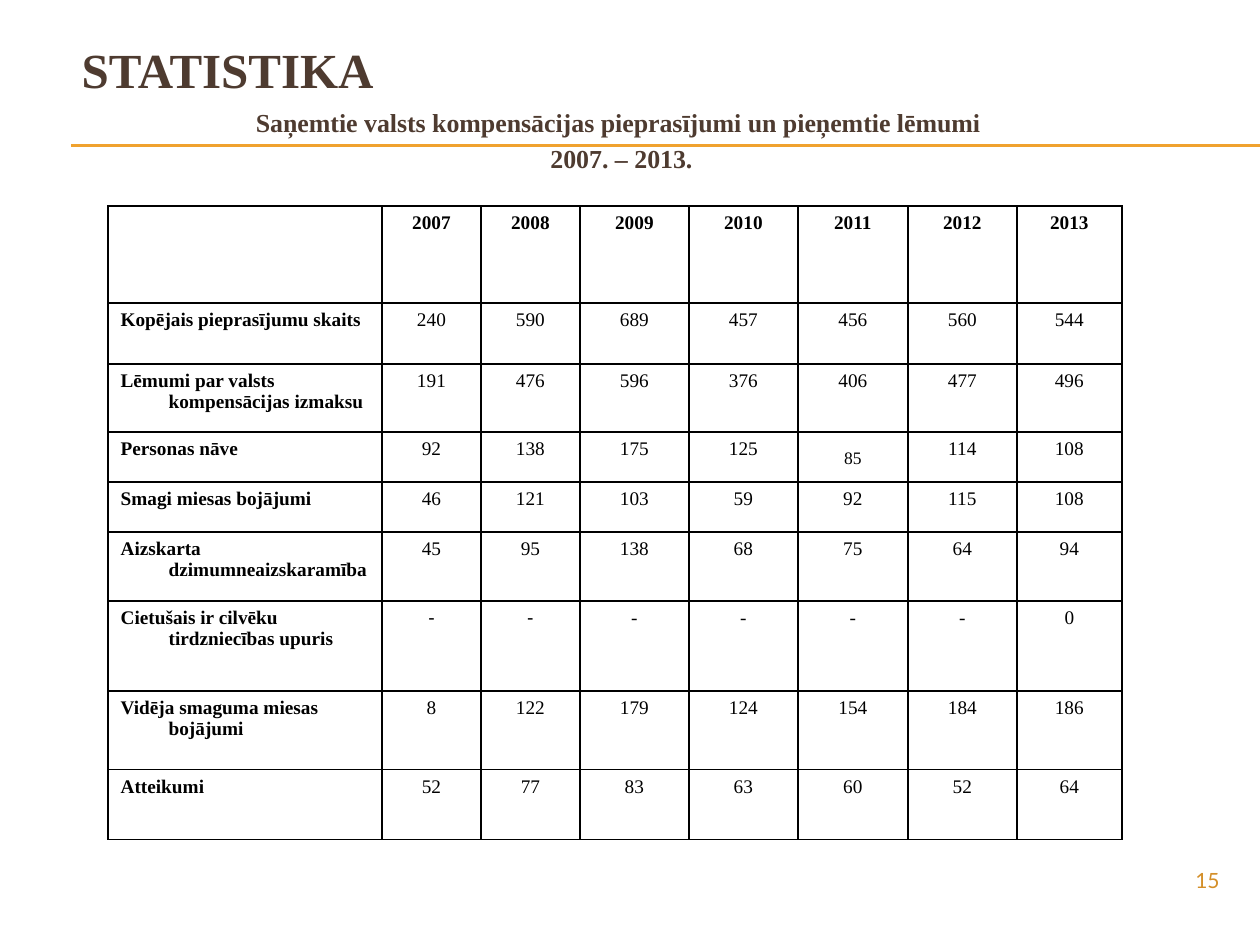
from lxml import etree
from pptx import Presentation
from pptx import util as u
from pptx.dml.color import RGBColor
from pptx.enum import shapes, text
from pptx.oxml import ns

SCALE = 914400 / 126  # EMU per px
SERIF = "Times New Roman"
BROWN, AMBER, BLACK = "4E3B30", "F0A22E", "000000"


def px(length):
    return u.Emu(round(length * SCALE))


def write(para, words, hanging=None, **font):
    """Add one formatted run; hanging is (left margin, indent) in px."""
    if hanging:
        props = para._p.get_or_add_pPr()
        props.set("marL", str(px(hanging[0])))
        props.set("indent", str(px(hanging[1])))
    span = para.add_run()
    span.text = words
    span.font.color.rgb = RGBColor.from_string(font.pop("color"))
    for name, value in font.items():
        setattr(span.font, name, value)


deck = Presentation()
deck.slide_width, deck.slide_height = px(1260), px(945)
page = deck.slides.add_slide(deck.slide_layouts[1])

# Double rule under the heading
for y in (145, 146):
    rule = page.shapes.add_connector(shapes.MSO_CONNECTOR.STRAIGHT, px(71), px(y), px(1260), px(y))
    rule.line.color.rgb = RGBColor.from_string(AMBER)
    rule.line.width = u.Pt(0.75)
    etree.SubElement(rule._element.spPr, ns.qn("a:effectLst"))

# Title and subtitle placeholders
title, body = page.placeholders
places = [(title, (69, 20, 1074, 98), text.MSO_ANCHOR.MIDDLE),
          (body, (147, 100, 934, 78), text.MSO_ANCHOR.TOP)]
for box, place, anchor in places:
    box.left, box.top, box.width, box.height = map(px, place)
    box.text_frame.auto_size = text.MSO_AUTO_SIZE.NONE
    box.text_frame.vertical_anchor = anchor

heading = title.text_frame.paragraphs[0]
heading.alignment = text.PP_ALIGN.LEFT
write(heading, "STATISTIKA", size=u.Pt(28), name=SERIF, bold=True, color=BROWN)

subtitle = ["Saņemtie valsts kompensācijas pieprasījumi un pieņemtie lēmumi ", "2007. – 2013."]
for i, words in enumerate(subtitle):
    para = body.text_frame.add_paragraph() if i else body.text_frame.paragraphs[0]
    etree.SubElement(para._p.get_or_add_pPr(), ns.qn("a:buNone"))
    para.alignment = text.PP_ALIGN.CENTER
    para.space_before = u.Pt(3 if i else 0)
    write(para, words, (50, -35), size=u.Pt(14.8), name=SERIF, bold=True, color=BROWN)

# Statistics table
rows = [
    ["", "2007", "2008", "2009", "2010", "2011", "2012", "2013"],
    ["Kopējais pieprasījumu skaits ", 240, 590, 689, 457, 456, 560, 544],
    ["Lēmumi par valsts kompensācijas izmaksu", 191, 476, 596, 376, 406, 477, 496],
    ["Personas nāve ", 92, 138, 175, 125, 85, 114, 108],
    ["Smagi miesas bojājumi ", 46, 121, 103, 59, 92, 115, 108],
    ["Aizskarta dzimumneaizskaramība ", 45, 95, 138, 68, 75, 64, 94],
    ["Cietušais ir cilvēku tirdzniecības upuris", "-", "-", "-", "-", "-", "-", 0],
    ["Vidēja smaguma miesas bojājumi", 8, 122, 179, 124, 154, 184, 186],
    ["Atteikumi ", 52, 77, 83, 63, 60, 52, 64],
]
widths = [274, 99, 99, 109, 109, 110, 109, 105]
heights = [97, 61, 68, 50, 50, 69, 90, 79, 70]
table = page.shapes.add_table(len(rows), len(widths), px(108), px(206),
                              px(sum(widths)), px(sum(heights))).table
table.first_row = table.horz_banding = False
for column, width in zip(table.columns, widths):
    column.width = px(width)
for row, height in zip(table.rows, heights):
    row.height = px(height)

for r, values in enumerate(rows):
    for c, value in enumerate(values):
        cell = table.cell(r, c)
        props = cell._tc.get_or_add_tcPr()
        for side in ("lnL", "lnR", "lnT", "lnB"):
            border = etree.SubElement(props, ns.qn(f"a:{side}"), w=str(u.Pt(1)))
            fill = etree.SubElement(border, ns.qn("a:solidFill"))
            etree.SubElement(fill, ns.qn("a:srgbClr"), val=BLACK)
        cell.fill.background()
        if value == "":
            continue
        para = cell.text_frame.paragraphs[0]
        para.alignment = text.PP_ALIGN.CENTER if c else text.PP_ALIGN.LEFT
        look = {"size": u.Pt(11), "name": SERIF, "bold": r == 0 or c == 0, "color": BLACK}
        hanging = (48, -48) if c < 7 else None
        if value == "-" and c < 3:
            look["name"] = "Arial"
        if value == 85:  # the one smaller, vertically centred figure
            look["size"], hanging = u.Pt(10), None
            para.line_spacing = 1.15
            cell.vertical_anchor = text.MSO_ANCHOR.MIDDLE
            cell.margin_left = cell.margin_right = px(9)
            cell.margin_top = cell.margin_bottom = 0
        write(para, str(value), hanging, **look)

# Page number
number = page.shapes.add_textbox(px(970), px(861), px(262), px(63))
number.text_frame.word_wrap = True
para = number.text_frame.paragraphs[0]
para.alignment = text.PP_ALIGN.RIGHT
write(para, "15", size=u.Pt(12), name="Lato", color="D48F29")

deck.save("out.pptx")
